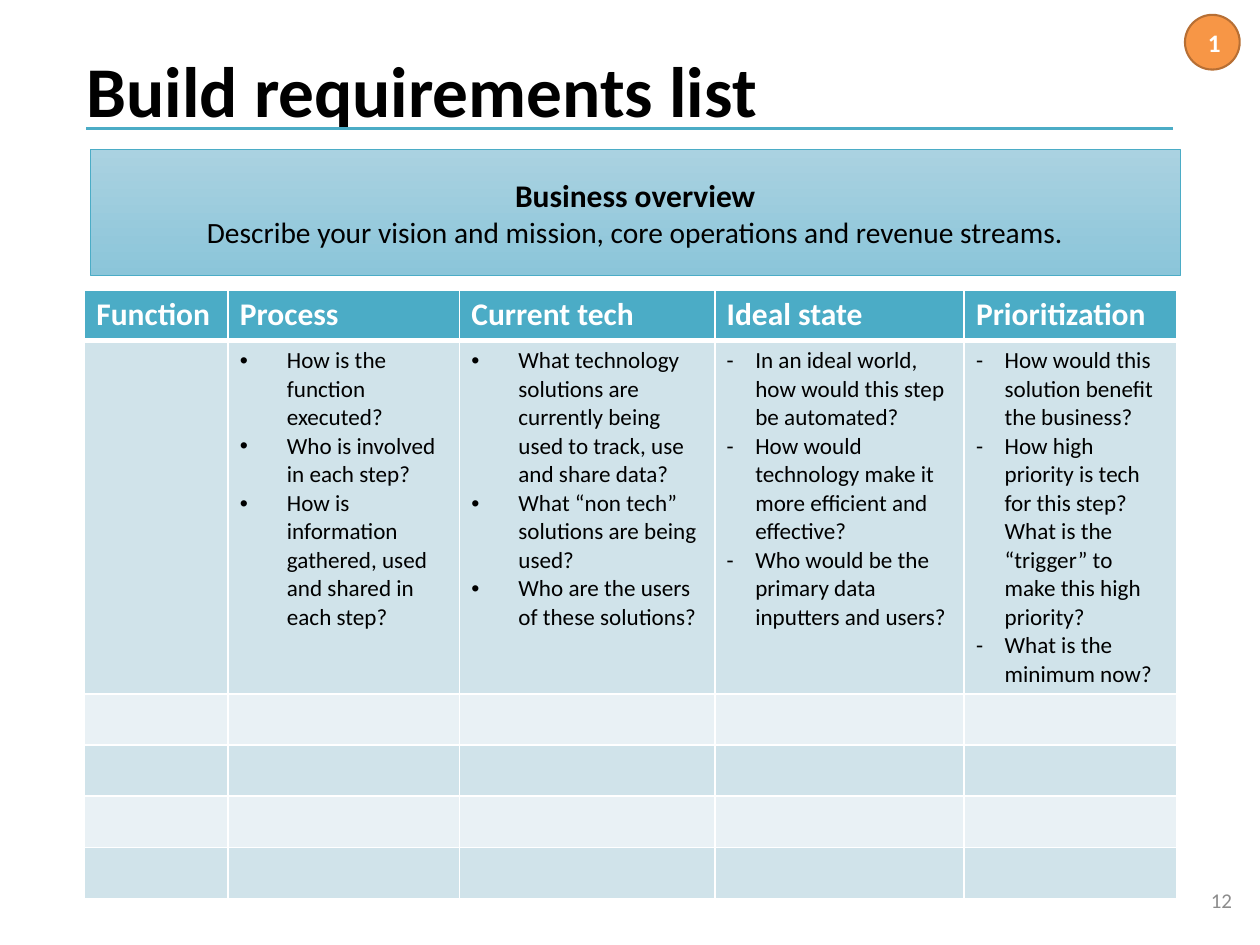
from lxml.etree import SubElement
from pptx import Presentation
from pptx.dml.color import RGBColor
from pptx.enum.shapes import MSO_CONNECTOR, MSO_SHAPE
from pptx.enum.text import MSO_ANCHOR, MSO_AUTO_SIZE, PP_ALIGN
from pptx.oxml.ns import qn
from pptx.util import Cm, Pt

TEAL = RGBColor(0x4B, 0xAC, 0xC6)
PANEL_TOP = RGBColor(0xAA, 0xD2, 0xE1)
PANEL_BOTTOM = RGBColor(0x8B, 0xC5, 0xD9)
BAND_DARK = RGBColor(0xD0, 0xE3, 0xEA)
BAND_LIGHT = RGBColor(0xE9, 0xF1, 0xF5)
ORANGE = RGBColor(0xF7, 0x96, 0x46)
BROWN = RGBColor(0xB7, 0x6F, 0x34)
GREY = RGBColor(0x8C, 0x8C, 0x8C)
BLACK = RGBColor(0, 0, 0)
WHITE = RGBColor(0xFF, 0xFF, 0xFF)
FONT = "Calibri"

COLUMNS = [
    ("Function", 2.41, "", 0, []),
    ("Process", 3.89, "•", 0.79, [
        "How is the function executed?",
        "Who is involved in each step?",
        "How is information gathered, used and shared in each step?"]),
    ("Current tech", 4.29, "•", 0.79, [
        "What technology solutions are currently being used to track, use and share data?",
        "What “non tech” solutions are being used?",
        "Who are the users of these solutions?"]),
    ("Ideal state", 4.19, "-", 0.48, [
        "In an ideal world, how would this step be automated?",
        "How would technology make it more efficient and effective?",
        "Who would be the primary data inputters and users?"]),
    ("Prioritization", 3.58, "-", 0.48, [
        "How would this solution benefit the business?",
        "How high priority is tech for this step? "
        "What is the “trigger” to make this high priority?",
        "What is the minimum now?"]),
]
ROW_HEIGHTS = [0.85, 5.94] + [0.86] * 4


def style_para(para, size, color, bold=False, align=PP_ALIGN.LEFT):
    para.alignment = align
    for span in para.runs:
        span.font.name = FONT
        span.font.size = Pt(size)
        span.font.bold = bold
        span.font.color.rgb = color


def set_margins(holder, side, end):
    holder.margin_left = holder.margin_right = Cm(side)
    holder.margin_top = holder.margin_bottom = Cm(end)


def add_bullet(para, mark, indent):
    properties = para._p.get_or_add_pPr()
    properties.set("marL", str(Cm(indent)))
    properties.set("indent", str(-Cm(indent)))
    SubElement(properties, qn("a:buFont"), typeface="Arial" if mark == "•" else FONT)
    SubElement(properties, qn("a:buChar"), char=mark)


def add_borders(cell, bottom_width):
    properties = cell._tc.get_or_add_tcPr()
    for side, width in (("L", 1), ("R", 1), ("T", 1), ("B", bottom_width)):
        border = SubElement(properties, qn(f"a:ln{side}"), w=str(Pt(width)))
        fill = SubElement(border, qn("a:solidFill"))
        SubElement(fill, qn("a:srgbClr"), val=str(WHITE))


def add_heading(page, left, top, width, height):
    title = page.shapes.title
    title.left, title.top, title.width, title.height = (
        Cm(left), Cm(top), Cm(width), Cm(height))
    frame = title.text_frame
    frame.text = "Build requirements list"
    frame.auto_size = MSO_AUTO_SIZE.NONE
    frame.vertical_anchor = MSO_ANCHOR.MIDDLE
    para = frame.paragraphs[0]
    para.line_spacing = 0.9
    style_para(para, 34, BLACK, True)
    rule_left, rule_top = left + 0.25, top + 1.58
    rule = page.shapes.add_connector(
        MSO_CONNECTOR.STRAIGHT, Cm(rule_left), Cm(rule_top),
        Cm(left + width), Cm(rule_top))
    rule.line.color.rgb = TEAL
    rule.line.width = Pt(1.5)
    SubElement(rule._element.spPr, qn("a:effectLst"))


def add_overview(page, left, top, width, height):
    box = page.shapes.add_shape(
        MSO_SHAPE.RECTANGLE, Cm(left), Cm(top), Cm(width), Cm(height))
    box.shadow.inherit = False
    box.fill.gradient()
    box.fill.gradient_angle = 270
    for stop, color in zip(box.fill.gradient_stops, (PANEL_TOP, PANEL_BOTTOM)):
        stop.color.rgb = color
    box.line.color.rgb = TEAL
    box.line.width = Pt(0.5)
    frame = box.text_frame
    set_margins(frame, 0.2, 0.1)
    frame.vertical_anchor = MSO_ANCHOR.MIDDLE
    frame.text = ("Business overview\n"
                  "Describe your vision and mission, core operations and revenue streams.")
    heading, description = frame.paragraphs
    style_para(heading, 15, BLACK, True, PP_ALIGN.CENTER)
    style_para(description, 14, BLACK, False, PP_ALIGN.CENTER)


def add_requirements(page, left, top, width, height):
    table = page.shapes.add_table(
        len(ROW_HEIGHTS), len(COLUMNS),
        Cm(left), Cm(top), Cm(width), Cm(height)).table
    for row, row_height in zip(table.rows, ROW_HEIGHTS):
        row.height = Cm(row_height)
    for index, (heading, column_width, mark, indent, questions) in enumerate(COLUMNS):
        table.columns[index].width = Cm(column_width)
        for number in range(len(ROW_HEIGHTS)):
            cell = table.cell(number, index)
            set_margins(cell, 0.2, 0.1)
            add_borders(cell, 3 if number == 0 else 1)
            cell.fill.solid()
            band = BAND_DARK if number % 2 else BAND_LIGHT
            cell.fill.fore_color.rgb = band if number else TEAL
            if number == 0:
                cell.text_frame.text = heading
                style_para(cell.text_frame.paragraphs[0], 15, WHITE, True)
            elif number == 1 and questions:
                cell.text_frame.text = "\n".join(questions)
                for para in cell.text_frame.paragraphs:
                    add_bullet(para, mark, indent)
                    style_para(para, 11, BLACK)
            else:
                ending = cell.text_frame.paragraphs[0]._p.get_or_add_endParaRPr()
                ending.set("sz", "1500")


def add_step_badge(page, left, top, width, height):
    badge = page.shapes.add_shape(
        MSO_SHAPE.OVAL, Cm(left), Cm(top), Cm(width), Cm(height))
    badge.shadow.inherit = False
    badge.fill.solid()
    badge.fill.fore_color.rgb = ORANGE
    badge.line.color.rgb = BROWN
    badge.line.width = Pt(1)
    frame = badge.text_frame
    frame.vertical_anchor = MSO_ANCHOR.MIDDLE
    frame.text = "1"
    style_para(frame.paragraphs[0], 12, WHITE, True, PP_ALIGN.CENTER)


def add_page_number(page, left, top, width, height):
    box = page.shapes.add_textbox(Cm(left), Cm(top), Cm(width), Cm(height))
    frame = box.text_frame
    frame.word_wrap = True
    frame.vertical_anchor = MSO_ANCHOR.MIDDLE
    frame.text = "12"
    style_para(frame.paragraphs[0], 10, GREY, False, PP_ALIGN.RIGHT)


def main():
    deck = Presentation()
    deck.slide_width, deck.slide_height = Cm(21.17), Cm(15.88)
    page = deck.slides.add_slide(deck.slide_layouts[5])
    add_heading(page, 1.2, 0.58, 18.51, 2)
    add_page_number(page, 16.18, 14.71, 4.77, 0.84)
    add_requirements(page, 1.42, 4.87, sum(column[1] for column in COLUMNS),
                     sum(ROW_HEIGHTS))
    add_overview(page, 1.52, 2.52, 18.31, 2.11)
    add_step_badge(page, 19.91, 0.25, 0.92, 0.92)
    deck.save("out.pptx")


if __name__ == "__main__":
    main()
